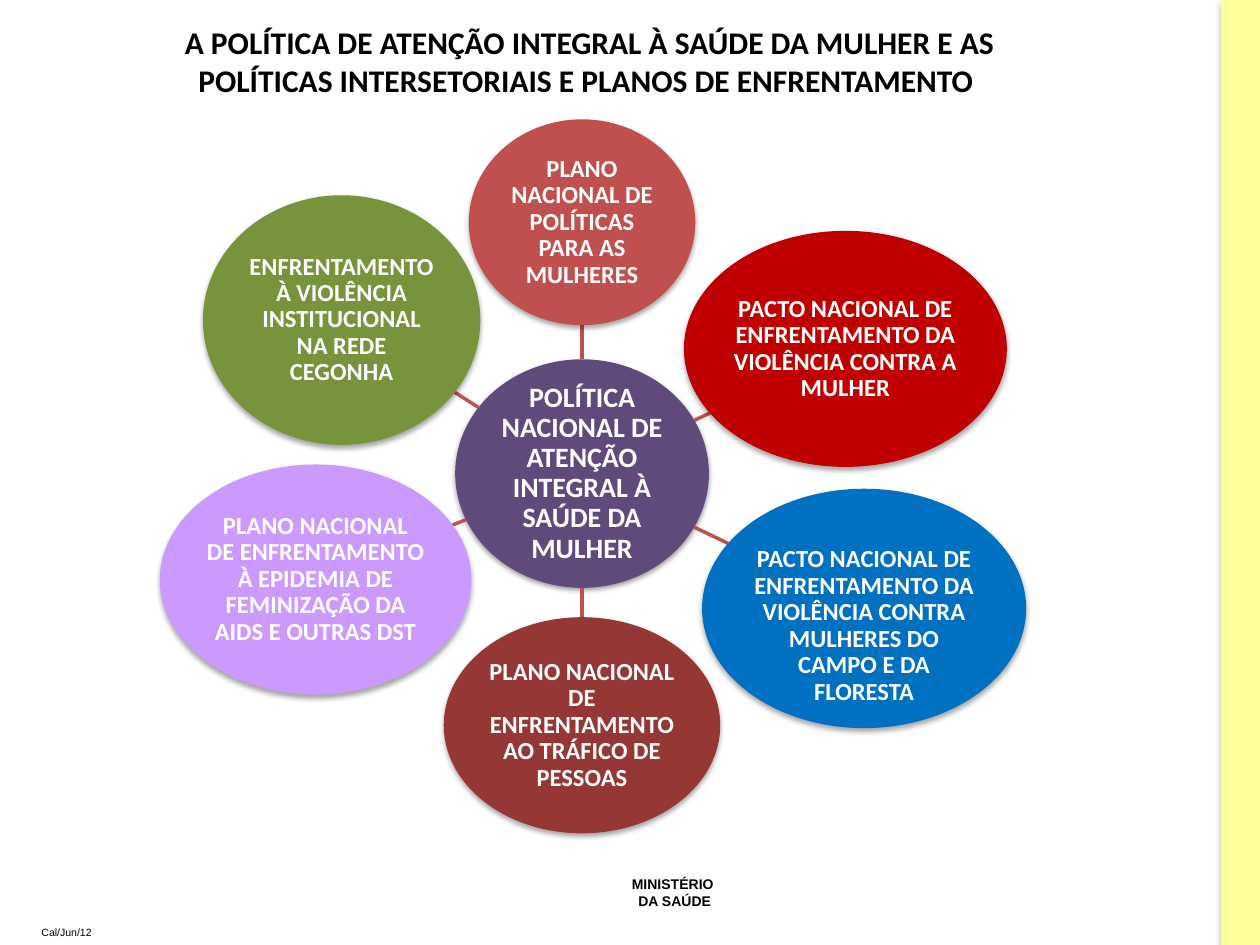
from math import hypot

from lxml.etree import SubElement
from pptx import Presentation
from pptx.dml.color import RGBColor
from pptx.enum.shapes import MSO_CONNECTOR, MSO_SHAPE
from pptx.enum.text import MSO_ANCHOR, MSO_AUTO_SIZE, PP_ALIGN
from pptx.oxml.ns import qn
from pptx.util import Pt

COLOURS = {
    "black": "000000", "white": "FFFFFF", "band": "FFFF99", "spoke": "C0504D",
    "hub": "604A7B", "coral": "C0504D", "red": "C00000", "blue": "0070C0",
    "maroon": "953735", "lilac": "CC99FF", "green": "77933C",
}

# Ellipses: colour, (left, top, width, height) in points, text
HUB = ("hub", (327.6, 205.2, 145, 130.6),
       "POLÍTICA NACIONAL DE ATENÇÃO INTEGRAL À SAÚDE DA MULHER")
PLANS = [
    ("coral", (267.9, 68.2, 129.4, 117.6),
     "PLANO NACIONAL DE POLÍTICAS PARA AS MULHERES"),
    ("red", (390.8, 131.9, 184.5, 134.9),
     "PACTO NACIONAL DE ENFRENTAMENTO DA VIOLÊNCIA CONTRA A MULHER"),
    ("blue", (401.2, 279.3, 185.2, 136.8),
     "PACTO NACIONAL DE ENFRENTAMENTO DA VIOLÊNCIA CONTRA MULHERES DO "
     "CAMPO E DA FLORESTA"),
    ("maroon", (253.6, 352.7, 158, 123.5),
     "PLANO NACIONAL DE ENFRENTAMENTO AO TRÁFICO DE PESSOAS"),
    ("lilac", (91.3, 265.4, 178, 131.5),
     "PLANO NACIONAL DE ENFRENTAMENTO À EPIDEMIA DE FEMINIZAÇÃO DA AIDS E "
     "OUTRAS DST"),
    ("green", (116, 111.6, 158.5, 142.6),
     "ENFRENTAMENTO À VIOLÊNCIA INSTITUCIONAL NA REDE CEGONHA"),
]
HUB = ("hub", (260.1, 205.3, 145, 130.6), HUB[2])

HUB_SHADOW = {"alpha": 38, "blur": 3.1, "distance": 1.6}
PLAN_SHADOW = {"alpha": 35, "blur": 3.1, "distance": 1.8}
BAND_SHADOW = {"alpha": 32, "blur": 3.5, "distance": 2.2}


def colour(name):
    return RGBColor.from_string(COLOURS[name])


def apply(target, values):
    for name, value in values.items():
        setattr(target, name, value)


def write_lines(frame, lines, font, paragraph_format, frame_format):
    apply(frame, frame_format)
    for index, line in enumerate(lines):
        para = frame.paragraphs[0] if index == 0 else frame.add_paragraph()
        apply(para, paragraph_format)
        span = para.add_run()
        span.text = line
        apply(span.font, {key: font[key] for key in ("name", "size", "bold")})
        span.font.color.rgb = colour(font["colour"])


def add_shadow(shape, alpha, blur, distance):
    shape.shadow.inherit = False
    effects = shape._element.spPr.find(qn("a:effectLst"))
    outer = SubElement(effects, qn("a:outerShdw"), blurRad=str(Pt(blur)),
                       dist=str(Pt(distance)), dir="5400000", rotWithShape="0")
    tint = SubElement(outer, qn("a:srgbClr"), val=COLOURS["black"])
    SubElement(tint, qn("a:alpha"), val=str(alpha * 1000))


def add_filled_shape(page, kind, bounds, fill, shadow):
    shape = page.shapes.add_shape(kind, *map(Pt, bounds))
    shape.fill.solid()
    shape.fill.fore_color.rgb = colour(fill)
    shape.line.fill.background()
    add_shadow(shape, **shadow)
    return shape


def add_ellipse(page, fill, bounds, text, size, shadow, frame_format=None):
    shape = add_filled_shape(page, MSO_SHAPE.OVAL, bounds, fill, shadow)
    margins = {f"margin_{side}": Pt(0.8) for side in ("left", "top", "right", "bottom")}
    font = {"name": "Calibri", "size": Pt(size), "bold": True, "colour": "white"}
    write_lines(shape.text_frame, [text], font,
                {"alignment": PP_ALIGN.CENTER, "line_spacing": 0.9},
                {"word_wrap": True, "vertical_anchor": MSO_ANCHOR.MIDDLE,
                 **margins, **(frame_format or {})})


def centre(bounds):
    left, top, width, height = bounds
    return left + width / 2, top + height / 2


def edge_towards(bounds, target):
    """Point where the ray from the ellipse centre to target leaves the ellipse."""
    x, y = centre(bounds)
    dx, dy = target[0] - x, target[1] - y
    reach = hypot(dx / (bounds[2] / 2), dy / (bounds[3] / 2))
    return x + dx / reach, y + dy / reach


def add_spoke(page, hub, plan):
    start = edge_towards(hub, centre(plan))
    end = edge_towards(plan, centre(hub))
    spoke = page.shapes.add_connector(MSO_CONNECTOR.STRAIGHT, *map(Pt, start + end))
    spoke.line.color.rgb = colour("spoke")
    spoke.line.width = Pt(2)
    SubElement(spoke._element.spPr, qn("a:effectLst"))


def add_label(page, bounds, lines, size, bold, alignment, wrap):
    box = page.shapes.add_textbox(*map(Pt, bounds))
    font = {"name": "Arial", "size": Pt(size), "bold": bold, "colour": "black"}
    write_lines(box.text_frame, lines, font, {"alignment": alignment},
                {"word_wrap": wrap})


def set_title(page, bounds, lines):
    title = page.shapes.title
    apply(title, dict(zip(("left", "top", "width", "height"), map(Pt, bounds))))
    font = {"name": "Calibri", "size": Pt(18), "bold": True, "colour": "black"}
    write_lines(title.text_frame, lines, font, {"alignment": PP_ALIGN.CENTER},
                {"word_wrap": True, "auto_size": MSO_AUTO_SIZE.NONE,
                 "vertical_anchor": MSO_ANCHOR.MIDDLE})


def main():
    deck = Presentation()
    deck.slide_width, deck.slide_height = Pt(720), Pt(540)
    page = deck.slides.add_slide(deck.slide_layouts[5])

    # Side band, signature and date
    add_filled_shape(page, MSO_SHAPE.RECTANGLE, (697.7, 0, 22.3, 540), "band", BAND_SHADOW)
    add_label(page, (337.7, 496.8, 95.8, 26.6), ["MINISTÉRIO ", "DA SAÚDE"],
              8, True, PP_ALIGN.CENTER, True)
    add_label(page, (16.6, 525.6, 43.9, 14.4), ["Cal/Jun/12"],
              6, False, PP_ALIGN.LEFT, False)

    # Title
    set_title(page, (25.2, 9.4, 623.5, 51.1),
              ["A POLÍTICA DE ATENÇÃO INTEGRAL À SAÚDE DA MULHER E AS",
               "POLÍTICAS INTERSETORIAIS E PLANOS DE ENFRENTAMENTO "])

    # Central policy with its surrounding plans
    add_ellipse(page, *HUB, 16, HUB_SHADOW)
    lowered = {"vertical_anchor": MSO_ANCHOR.TOP, "margin_top": Pt(13)}
    for fill, bounds, text in PLANS:
        add_spoke(page, HUB[1], bounds)
        add_ellipse(page, fill, bounds, text, 14, PLAN_SHADOW,
                    lowered if fill == "blue" else None)

    deck.save("out.pptx")


if __name__ == "__main__":
    main()
